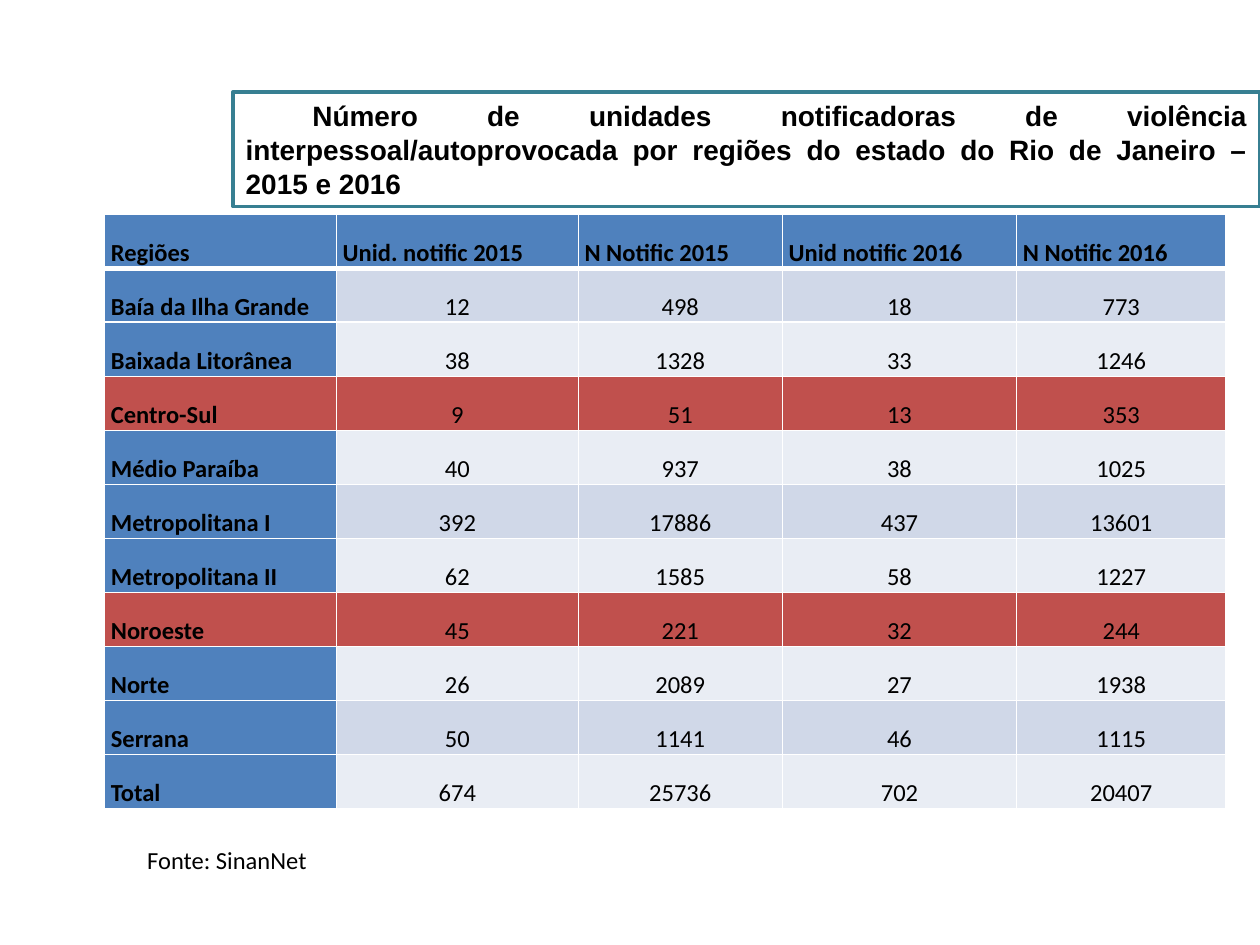
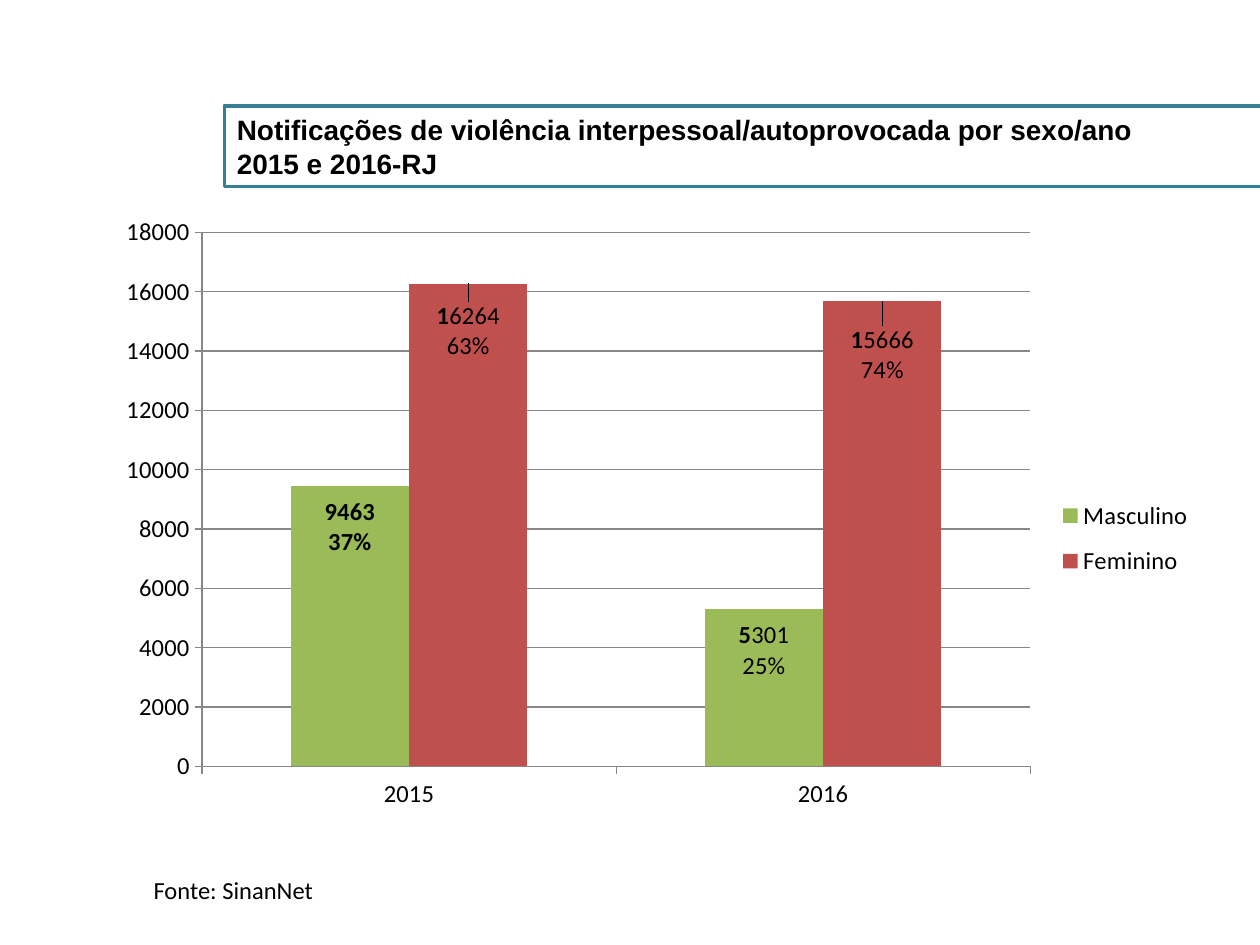
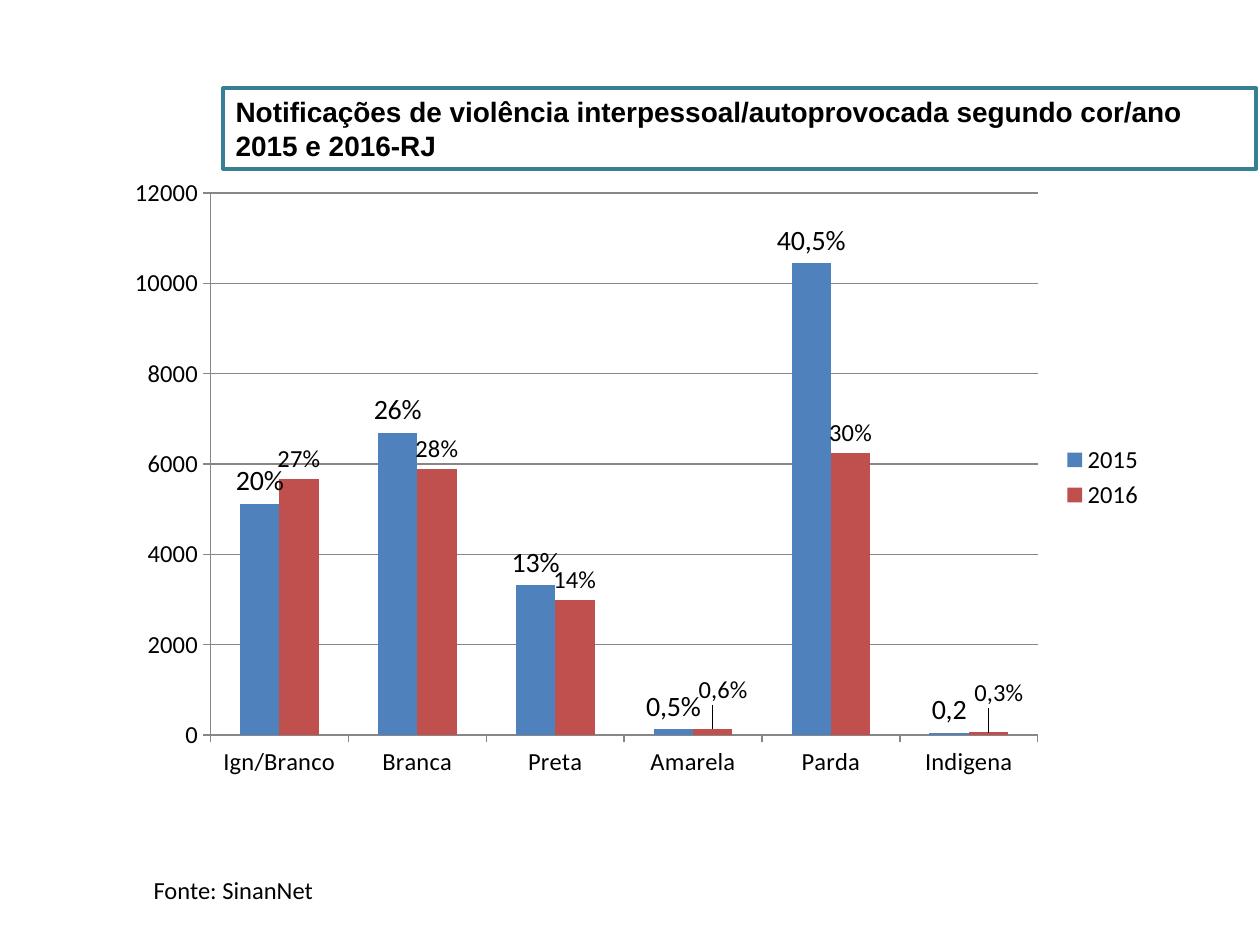
from dataclasses import dataclass

from lxml import etree
from pptx import Presentation
from pptx.chart.data import CategoryChartData
from pptx.dml.color import RGBColor
from pptx.enum.chart import XL_CHART_TYPE, XL_LABEL_POSITION, XL_LEGEND_POSITION, XL_TICK_MARK
from pptx.enum.text import MSO_ANCHOR, MSO_AUTO_SIZE, PP_ALIGN
from pptx.oxml import parse_xml
from pptx.oxml.ns import nsdecls, qn
from pptx.util import Inches, Pt

COLUMN_CLUSTERED = XL_CHART_TYPE.COLUMN_CLUSTERED
LEGEND_RIGHT = XL_LEGEND_POSITION.RIGHT
INSIDE_END = XL_LABEL_POSITION.INSIDE_END
OUTSIDE_END = XL_LABEL_POSITION.OUTSIDE_END
TICK_OUTSIDE = XL_TICK_MARK.OUTSIDE
TOP, MIDDLE, BOTTOM = MSO_ANCHOR.TOP, MSO_ANCHOR.MIDDLE, MSO_ANCHOR.BOTTOM
LEFT, CENTER, JUSTIFY = PP_ALIGN.LEFT, PP_ALIGN.CENTER, PP_ALIGN.JUSTIFY
TITLE_ONLY = 5

SLIDE_WIDTH, SLIDE_HEIGHT = Inches(10), Inches(7.5)
GRID_COLUMNS, GRID_ROWS = 100, 75


@dataclass(frozen=True)
class Theme:
    title_font: str = "Arial"
    body_font: str = "Calibri"
    title_size: int = 16
    body_size: int = 14
    large_label_size: int = 16
    text: str = "000000"
    frame: str = "377F92"
    blue: str = "4F81BD"
    red: str = "C0504D"
    green: str = "9BBB59"
    band_dark: str = "D0D8E8"
    band_light: str = "E9EDF4"
    border: str = "FFFFFF"
    axis: str = "878787"


THEME = Theme()


@dataclass(frozen=True)
class Label:
    """A column's label: its first bold_count letters are bold; shift is a share of the chart."""
    text: str
    bold_count: int = 0
    shift: tuple = (0, 0)


@dataclass(frozen=True)
class ColumnSeries:
    name: str
    values: tuple
    color: str
    labels: tuple
    label_size: int = THEME.body_size


REGION_HEADER = ("Regiões", "Unid. notific 2015", "N Notific 2015", "Unid notific 2016", "N Notific 2016")
REGION_ROWS = (
    ("Baía da Ilha Grande", 12, 498, 18, 773),
    ("Baixada Litorânea", 38, 1328, 33, 1246),
    ("Centro-Sul", 9, 51, 13, 353),
    ("Médio Paraíba", 40, 937, 38, 1025),
    ("Metropolitana I", 392, 17886, 437, 13601),
    ("Metropolitana II", 62, 1585, 58, 1227),
    ("Noroeste", 45, 221, 32, 244),
    ("Norte", 26, 2089, 27, 1938),
    ("Serrana", 50, 1141, 46, 1115),
    ("Total", 674, 25736, 702, 20407),
)
HIGHLIGHTED_REGIONS = {"Centro-Sul", "Noroeste"}
REGION_COLUMN_SHARES = (18.4, 19.2, 16.2, 18.6, 16.6)

SEX_SERIES = (
    ColumnSeries("Masculino", (9463, 5301), THEME.green,
                 (Label("9463\n37%", 7, (0, 0.01)), Label("5301\n25%", 1, (0, 0.01)))),
    ColumnSeries("Feminino", (16264, 15666), THEME.red,
                 (Label("16264\n63%", 1, (0, 0.02)), Label("15666\n74%", 1, (0, 0.03)))),
)
COLOR_CATEGORIES = ("Ign/Branco", "Branca", "Preta", "Amarela", "Parda", "Indigena")
COLOR_SERIES = (
    ColumnSeries("2015", (5118, 6693, 3311, 127, 10441, 47), THEME.blue,
                 tuple(map(Label, ("20%", "26%", "13%", "0,5%", "40,5%", "0,2"))),
                 THEME.large_label_size),
    ColumnSeries("2016", (5671, 5889, 2995, 135, 6233, 59), THEME.red,
                 (Label("27%"), Label("28%"), Label("14%"), Label("0,6%", shift=(0.01, -0.03)),
                  Label("30%"), Label("0,3%", shift=(0.01, -0.03)))),
)


# Shared helpers
def grid_box(left, top, width, height):
    """Turn grid columns and rows into slide lengths."""
    column, row = SLIDE_WIDTH / GRID_COLUMNS, SLIDE_HEIGHT / GRID_ROWS
    return int(left * column), int(top * row), int(width * column), int(height * row)


def rgb(color):
    return RGBColor.from_string(color)


def style_font(font, size=THEME.body_size, bold=False, name=THEME.body_font):
    font.name, font.size, font.bold = name, Pt(size), bold
    font.color.rgb = rgb(THEME.text)


def add_title(page, lines, box, first_indent=0):
    title = page.shapes.title
    title.left, title.top, title.width, title.height = box
    title.line.color.rgb = rgb(THEME.frame)
    title.line.width = Pt(2)
    frame = title.text_frame
    frame.text = "\n".join(lines)
    frame.word_wrap = True
    frame.auto_size = MSO_AUTO_SIZE.NONE
    frame.vertical_anchor = MIDDLE
    for para in frame.paragraphs:
        para.alignment = JUSTIFY
        for span in para.runs:
            style_font(span.font, THEME.title_size, True, THEME.title_font)
    frame.paragraphs[0]._p.get_or_add_pPr().set("indent", str(Inches(first_indent)))


def add_source(page, box, anchor):
    frame = page.shapes.add_textbox(*box).text_frame
    frame.word_wrap = True
    frame.vertical_anchor = anchor
    frame.text = "Fonte: SinanNet"
    style_font(frame.paragraphs[0].runs[0].font)


# Table of regions
def set_borders(cell, top, bottom):
    properties = cell._tc.get_or_add_tcPr()
    widths = {"lnL": 1, "lnR": 1, "lnT": top, "lnB": bottom}
    for position, (side, width) in enumerate(widths.items()):
        line = parse_xml(
            f'<a:{side} {nsdecls("a")} w="{Pt(width)}"><a:solidFill>'
            f'<a:srgbClr val="{THEME.border}"/></a:solidFill></a:{side}>')
        properties.insert(position, line)


def region_fill(row, column, region):
    if region in HIGHLIGHTED_REGIONS:
        return THEME.red
    if row == 0 or column == 0:
        return THEME.blue
    return THEME.band_dark if row % 2 else THEME.band_light


def add_region_table(page, box):
    rows = (REGION_HEADER, *REGION_ROWS)
    left, top, width, height = box
    table = page.shapes.add_table(len(rows), len(REGION_HEADER), *box).table
    for column, share in zip(table.columns, REGION_COLUMN_SHARES):
        column.width = int(width * share / sum(REGION_COLUMN_SHARES))
    for row_index, values in enumerate(rows):
        table.rows[row_index].height = height // len(rows)
        for column_index, value in enumerate(values):
            heading = row_index == 0 or column_index == 0
            cell = table.cell(row_index, column_index)
            cell.text = str(value)
            cell.vertical_anchor = BOTTOM
            cell.margin_left = cell.margin_right = Inches(0.05)
            cell.margin_top = cell.margin_bottom = 0
            cell.fill.solid()
            cell.fill.fore_color.rgb = rgb(region_fill(row_index, column_index, values[0]))
            set_borders(cell, 3 if row_index == 1 else 1, 3 if row_index == 0 else 1)
            para = cell.text_frame.paragraphs[0]
            para.alignment = LEFT if heading else CENTER
            para.line_spacing = 1.5
            style_font(para.runs[0].font, bold=heading)


# Column charts
def set_layout(parent, position, inner=False, **shares):
    """Place a chart part by shares of the chart's size."""
    for old in parent.findall(qn("c:layout")):
        parent.remove(old)
    layout = etree.Element(qn("c:layout"))
    manual = etree.SubElement(layout, qn("c:manualLayout"))
    settings = {"layoutTarget": "inner"} if inner else {}
    if "w" in shares:
        settings.update(xMode="edge", yMode="edge")
    settings.update(shares)
    for tag, value in settings.items():
        etree.SubElement(manual, qn(f"c:{tag}")).set("val", str(value))
    parent.insert(position, layout)


def write_label(data_label, label, size, position):
    frame = data_label.text_frame
    bold_left = label.bold_count
    for index, line in enumerate(label.text.split("\n")):
        para = frame.add_paragraph() if index else frame.paragraphs[0]
        for text, bold in ((line[:bold_left], True), (line[bold_left:], False)):
            if text:
                span = para.add_run()
                span.text = text
                style_font(span.font, size, bold)
        bold_left = max(0, bold_left - len(line))
    data_label.position = position
    if any(label.shift):
        set_layout(data_label._get_or_add_dLbl(), 1, x=label.shift[0], y=label.shift[1])


def style_axes(chart, maximum):
    for axis in (chart.category_axis, chart.value_axis):
        axis.major_tick_mark = TICK_OUTSIDE
        axis.format.line.color.rgb = rgb(THEME.axis)
        style_font(axis.tick_labels.font)
    chart.value_axis.minimum_scale = 0
    chart.value_axis.maximum_scale = maximum
    chart.value_axis.major_unit = 2000
    chart.value_axis.has_major_gridlines = True
    chart.value_axis.major_gridlines.format.line.color.rgb = rgb(THEME.axis)


def add_column_chart(page, box, categories, columns, maximum, position, plot_area, legend_area=None):
    data = CategoryChartData(number_format="General")
    data.categories = categories
    for column in columns:
        data.add_series(column.name, column.values)
    chart = page.shapes.add_chart(COLUMN_CLUSTERED, *box, data).chart
    style_font(chart.font)
    chart.has_title = False
    style_axes(chart, maximum)

    plot = chart.plots[0]
    plot.gap_width, plot.overlap = 150, 0
    plot.vary_by_categories = False
    for series, column in zip(plot.series, columns):
        series.format.fill.solid()
        series.format.fill.fore_color.rgb = rgb(column.color)
        series.data_labels.show_value = True
        series.data_labels.position = position
        style_font(series.data_labels.font, column.label_size)
        for index, label in enumerate(column.labels):
            write_label(series.points[index].data_label, label, column.label_size, position)

    chart.has_legend = True
    chart.legend.position = LEGEND_RIGHT
    chart.legend.include_in_layout = False
    style_font(chart.legend.font)
    set_layout(chart._chartSpace.chart.plotArea, 0, inner=True, **plot_area)
    if legend_area:
        set_layout(chart.legend._element, 1, **legend_area)


# Slides
def build_regions(page):
    add_title(page, ["Número de unidades notificadoras de violência interpessoal/autoprovocada "
                     "por regiões do estado do Rio de Janeiro – 2015 e 2016"],
              grid_box(18.5, 7.3, 81.5, 9.1), first_indent=0.53)
    add_source(page, grid_box(10.7, 66.6, 39.3, 6.4), TOP)
    add_region_table(page, grid_box(8.3, 17, 89, 47.2))


def build_sex(page):
    add_title(page, ["Notificações de violência interpessoal/autoprovocada por sexo/ano",
                     "2015 e 2016-RJ"], grid_box(17.8, 8.4, 82.4, 6.4))
    add_source(page, grid_box(11.2, 66.6, 38.8, 5.7), BOTTOM)
    add_column_chart(page, grid_box(6.7, 16.2, 89.8, 49.6), ("2015", "2016"), SEX_SERIES, 18000,
                     INSIDE_END, {"x": 0.104, "y": 0.045, "w": 0.732, "h": 0.855},
                     {"x": 0.85, "y": 0.45, "w": 0.14, "h": 0.17})


def build_color(page):
    add_title(page, ["Notificações de violência interpessoal/autoprovocada segundo cor/ano",
                     "2015 e 2016-RJ"], grid_box(17.7, 7, 82, 6.4))
    add_source(page, grid_box(11.2, 66.6, 38.8, 5.7), BOTTOM)
    add_column_chart(page, grid_box(9.1, 13.1, 82.7, 49.6), COLOR_CATEGORIES, COLOR_SERIES, 12000,
                     OUTSIDE_END, {"x": 0.092, "y": 0.045, "w": 0.794, "h": 0.867})


def main():
    deck = Presentation()
    deck.slide_width, deck.slide_height = SLIDE_WIDTH, SLIDE_HEIGHT
    for build in (build_regions, build_sex, build_color):
        build(deck.slides.add_slide(deck.slide_layouts[TITLE_ONLY]))
    deck.save("out.pptx")


if __name__ == "__main__":
    main()
